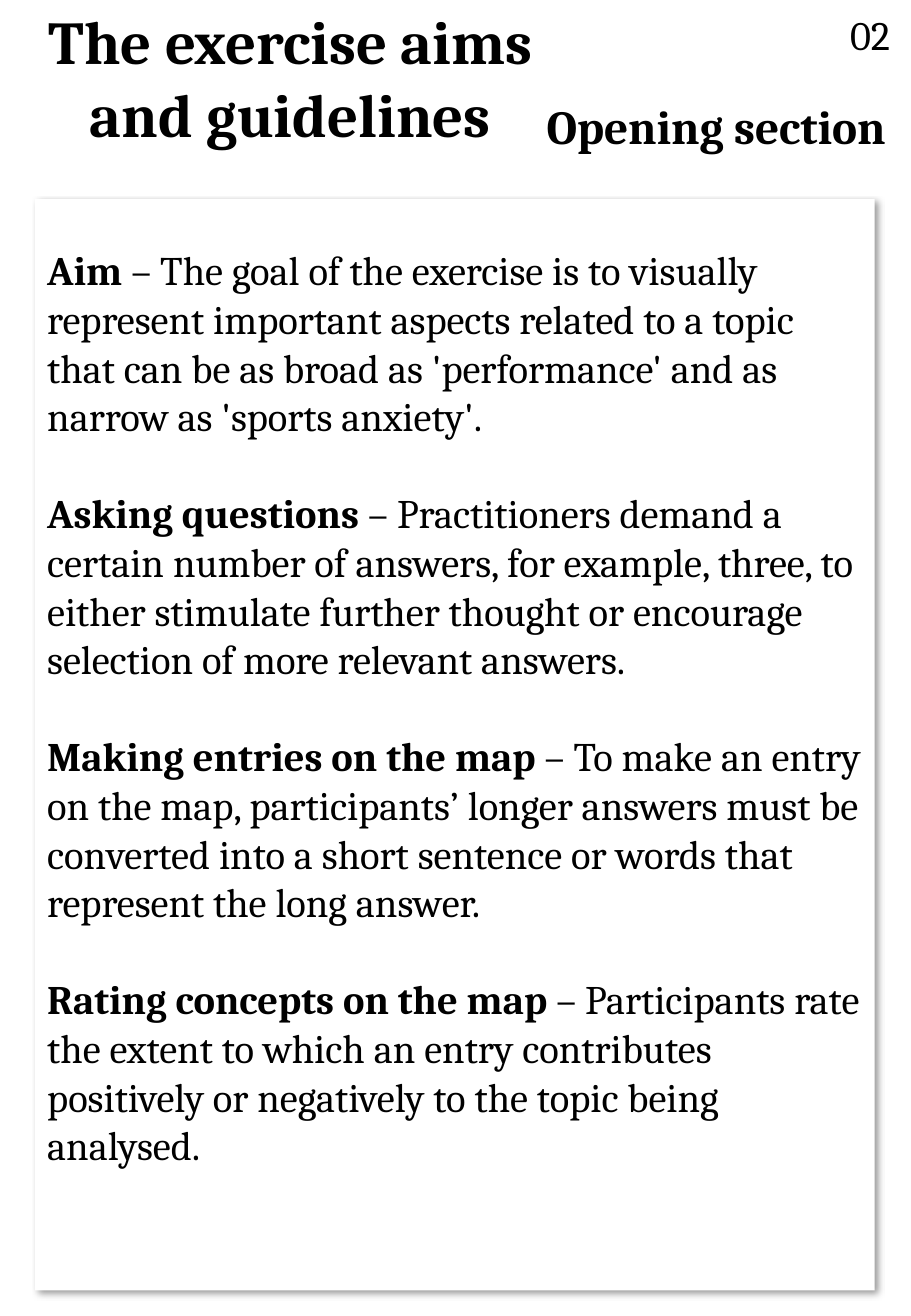
from lxml import etree
from pptx import Presentation, util as u
from pptx.dml.color import RGBColor
from pptx.enum import shapes, text
from pptx.oxml.ns import qn

WIDE, HIGH = 7.5, 10.83
FONT = "Cambria"
HUES = {"paper": "FFFFFF", "ink": "000000"}
TITLE = "The exercise aims and guidelines"
LABEL = "Opening section"
PAGE = "02"
GUIDE = [
    ("Aim", "The goal of the exercise is to visually represent important aspects related to a topic "
            "that can be as broad as 'performance' and as narrow as 'sports anxiety'."),
    ("Asking questions", "Practitioners demand a certain number of answers, for example, three, to either "
                         "stimulate further thought or encourage selection of more relevant answers."),
    ("Making entries on the map", "To make an entry on the map, participants’ longer answers must be converted "
                                  "into a short sentence or words that represent the long answer."),
    ("Rating concepts on the map", "Participants rate the extent to which an entry contributes "
                                   "positively or negatively to the topic being analysed."),
]
AREAS = {
    "page": (0, 0, 100, 100),
    "card": (3.87, 15.14, 92.13, 82.92),
    "label": (58.4, 6.37, 40.13, 6.28),
    "title": (1.2, 0.55, 61.33, 10.53),
    "number": (92, 0.28, 7.73, 4.62),
}

deck = Presentation()
deck.slide_width, deck.slide_height = u.Inches(WIDE), u.Inches(HIGH)
slide = deck.slides.add_slide(deck.slide_layouts[6])


def place(name):
    sides = (WIDE, HIGH, WIDE, HIGH)
    return [u.Inches(part * side / 100) for part, side in zip(AREAS[name], sides)]


def hue(name):
    return RGBColor.from_string(HUES[name])


def panel(name):
    box = slide.shapes.add_shape(shapes.MSO_SHAPE.RECTANGLE, *place(name))
    box.shadow.inherit = False
    box.fill.solid()
    box.fill.fore_color.rgb = hue("paper")
    box.line.fill.background()
    return box


def write(box, paras, size=24, align="LEFT", anchor="TOP", wrap=True, top=0.05, gap=0):
    frame = box.text_frame
    frame.word_wrap = wrap
    frame.margin_top = u.Inches(top)
    frame.vertical_anchor = text.MSO_ANCHOR[anchor]
    for i, runs in enumerate(paras):
        para = frame.add_paragraph() if i else frame.paragraphs[0]
        para.alignment = text.PP_ALIGN[align]
        para.space_before = u.Pt(gap if i else 0)
        for words, bold in runs:
            run = para.add_run()
            run.text = words
            run.font.name, run.font.size, run.font.bold = FONT, u.Pt(size), bold
            run.font.color.rgb = hue("ink")


def shade(box, blur=4, dist=3, angle=45, alpha=40):
    effects = box._element.spPr.find(qn("a:effectLst"))
    outer = etree.SubElement(effects, qn("a:outerShdw"), blurRad=str(u.Pt(blur)), dist=str(u.Pt(dist)),
                             dir=str(angle * 60000), algn="tl", rotWithShape="0")
    tint = etree.SubElement(outer, qn("a:srgbClr"), val=HUES["ink"])
    etree.SubElement(tint, qn("a:alpha"), val=str(alpha * 1000))


def label(name, words, bold=True, **style):
    write(slide.shapes.add_textbox(*place(name)), [[(words, bold)]], **style)


page = panel("page")
page.line.color.rgb = hue("paper")
page.line.width = u.Pt(1)

card = panel("card")
shade(card)
write(card, [[(f"{head} ", True), (f"– {body}", False)] for head, body in GUIDE], top=0.38, gap=28.8)

label("label", LABEL, size=28, align="RIGHT", anchor="MIDDLE")
label("title", TITLE, size=36, align="CENTER", anchor="MIDDLE")
label("number", PAGE, bold=False, wrap=False)

deck.save("out.pptx")
